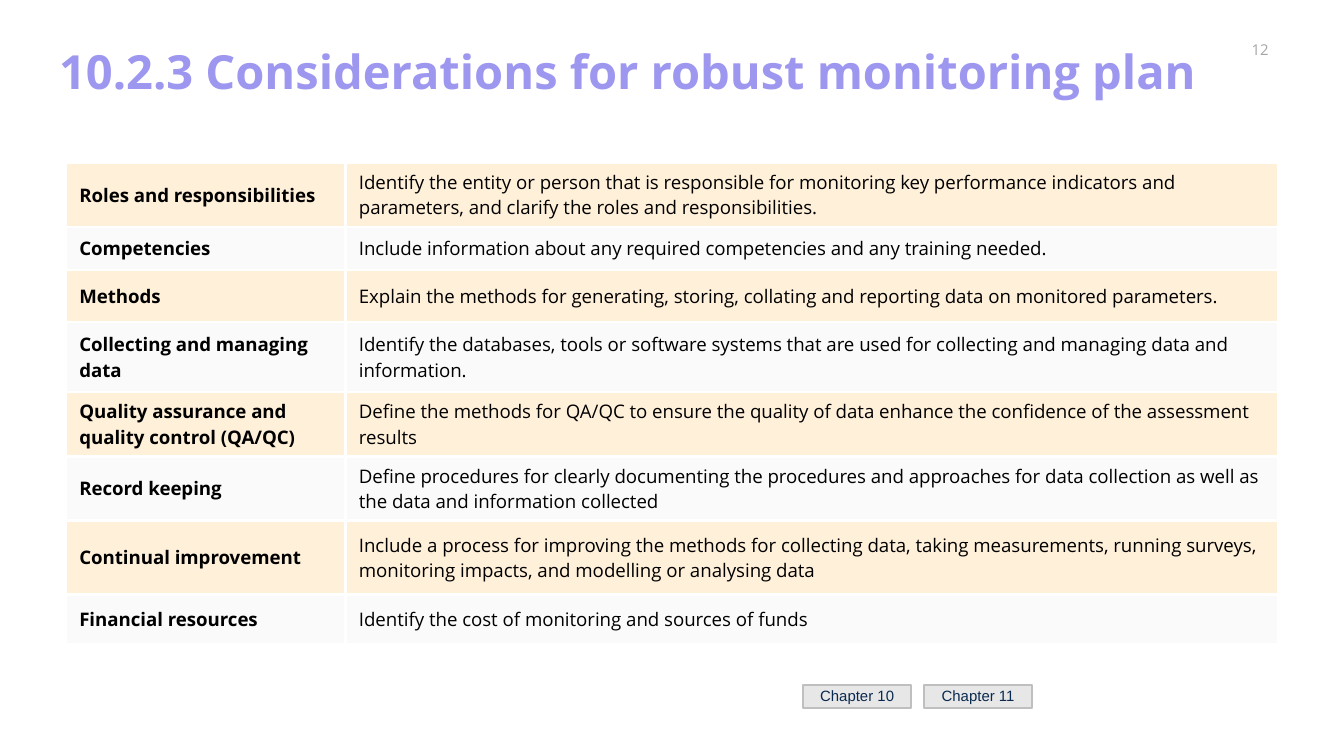
"""Build a slide listing the considerations for a robust monitoring plan."""
from lxml import etree
from pptx import Presentation
from pptx.dml.color import RGBColor
from pptx.enum import shapes, text
from pptx.oxml import ns
from pptx.util import Pt

COLOURS = {
    "title": "9D97F0",
    "number": "A5A5A5",
    "body": "000000",
    "odd_row": "FFF0DA",
    "even_row": "FAFAFA",
    "rule": "FFFFFF",
    "button": "E7E7E7",
    "button_line": "BFBFBF",
    "button_text": "09294E",
}
COLUMN_WIDTHS = (149.8, 499.7)
ROWS = [
    (34.4, "Roles and responsibilities",
     "Identify the entity or person that is responsible for monitoring key performance "
     "indicators and parameters, and clarify the roles and responsibilities."),
    (23, "Competencies",
     "Include information about any required competencies and any training needed."),
    (28.1, "Methods",
     "Explain the methods for generating, storing, collating and reporting data on "
     "monitored parameters."),
    (37.5, "Collecting and managing data",
     "Identify the databases, tools or software systems that are used for collecting and "
     "managing data and information."),
    (34.4, "Quality assurance and quality control (QA/QC)",
     "Define the methods for QA/QC to ensure the quality of data enhance the confidence "
     "of the assessment results"),
    (34.4, "Record keeping",
     "Define procedures for clearly documenting the procedures and approaches for data "
     "collection as well as the data and information collected"),
    (39.5, "Continual improvement",
     "Include a process for improving the methods for collecting data, taking "
     "measurements, running surveys, monitoring impacts, and modelling or analysing data"),
    (26.5, "Financial resources",
     "Identify the cost of monitoring and sources of funds"),
]


def colour(name):
    """Return the named palette colour."""
    return RGBColor.from_string(COLOURS[name])


def write(frame, words, size, ink, font="Open Sans", bold=False,
          align=text.PP_ALIGN.LEFT, spacing=None):
    """Put one formatted paragraph in a text frame."""
    frame.word_wrap = True
    frame.vertical_anchor = text.MSO_ANCHOR.MIDDLE
    para = frame.paragraphs[0]
    para.alignment = align
    para.line_spacing = spacing
    span = para.add_run()
    span.text = words
    span.font.name = font
    span.font.size = Pt(size)
    span.font.bold = bold
    span.font.color.rgb = colour(ink)


def add_title(page, words):
    """Place and format the title placeholder."""
    title = page.shapes.title
    title.left, title.top, title.width, title.height = Pt(24.5), Pt(17.3), Pt(671), Pt(45.4)
    title.text_frame.auto_size = text.MSO_AUTO_SIZE.NONE
    write(title.text_frame, words, 25.2, "title", bold=True, spacing=0.9)


def add_page_number(page, number):
    """Add the page number at the top right."""
    box = page.shapes.add_textbox(Pt(646.6), Pt(18.7), Pt(56.9), Pt(15.8))
    frame = box.text_frame
    frame.margin_left = frame.margin_right = frame.margin_top = frame.margin_bottom = 0
    write(frame, number, 8, "number", align=text.PP_ALIGN.CENTER)


def add_button(page, words, left):
    """Add a small chapter button."""
    button = page.shapes.add_shape(
        shapes.MSO_SHAPE.RECTANGLE, Pt(left), Pt(367.2), Pt(57.8), Pt(12.2))
    button.shadow.inherit = False
    button.fill.solid()
    button.fill.fore_color.rgb = colour("button")
    button.line.color.rgb = colour("button_line")
    button.line.width = Pt(1)
    write(button.text_frame, words, 8, "button_text", font="Arial",
          align=text.PP_ALIGN.CENTER, spacing=0.9)


def add_borders(cell, width):
    """Draw a rule on each side of a table cell."""
    properties = cell._tc.get_or_add_tcPr()
    for side in ("a:lnL", "a:lnR", "a:lnT", "a:lnB"):
        line = etree.SubElement(properties, ns.qn(side), w=str(Pt(width)))
        fill = etree.SubElement(line, ns.qn("a:solidFill"))
        etree.SubElement(fill, ns.qn("a:srgbClr"), val=COLOURS["rule"])


def fill_cell(cell, words, band, bold):
    """Format one table cell and write its text."""
    add_borders(cell, 1.5)
    cell.fill.solid()
    cell.fill.fore_color.rgb = colour(band)
    write(cell.text_frame, words, 10, "body", bold=bold)
    cell.vertical_anchor = text.MSO_ANCHOR.MIDDLE


def add_considerations(page):
    """Add the banded table of considerations."""
    heights = [height for height, *_ in ROWS]
    table = page.shapes.add_table(
        len(ROWS), len(COLUMN_WIDTHS), Pt(35.3), Pt(87.2),
        Pt(sum(COLUMN_WIDTHS)), Pt(sum(heights))).table
    table.first_row = table.horz_banding = False
    for column, width in zip(table.columns, COLUMN_WIDTHS):
        column.width = Pt(width)
    for index, (height, *words) in enumerate(ROWS):
        table.rows[index].height = Pt(height)
        band = "even_row" if index % 2 else "odd_row"
        for column, entry in enumerate(words):
            fill_cell(table.cell(index, column), entry, band, bold=column == 0)


def main():
    """Build and save the deck."""
    deck = Presentation()
    deck.slide_width, deck.slide_height = Pt(720), Pt(405)
    page = deck.slides.add_slide(deck.slide_layouts[5])
    add_page_number(page, "12")
    add_title(page, "10.2.3 Considerations for robust monitoring plan")
    for index, words in enumerate(("Chapter 10", "Chapter 11")):
        add_button(page, words, 430.3 + 64.8 * index)
    add_considerations(page)
    deck.save("out.pptx")


if __name__ == "__main__":
    main()
